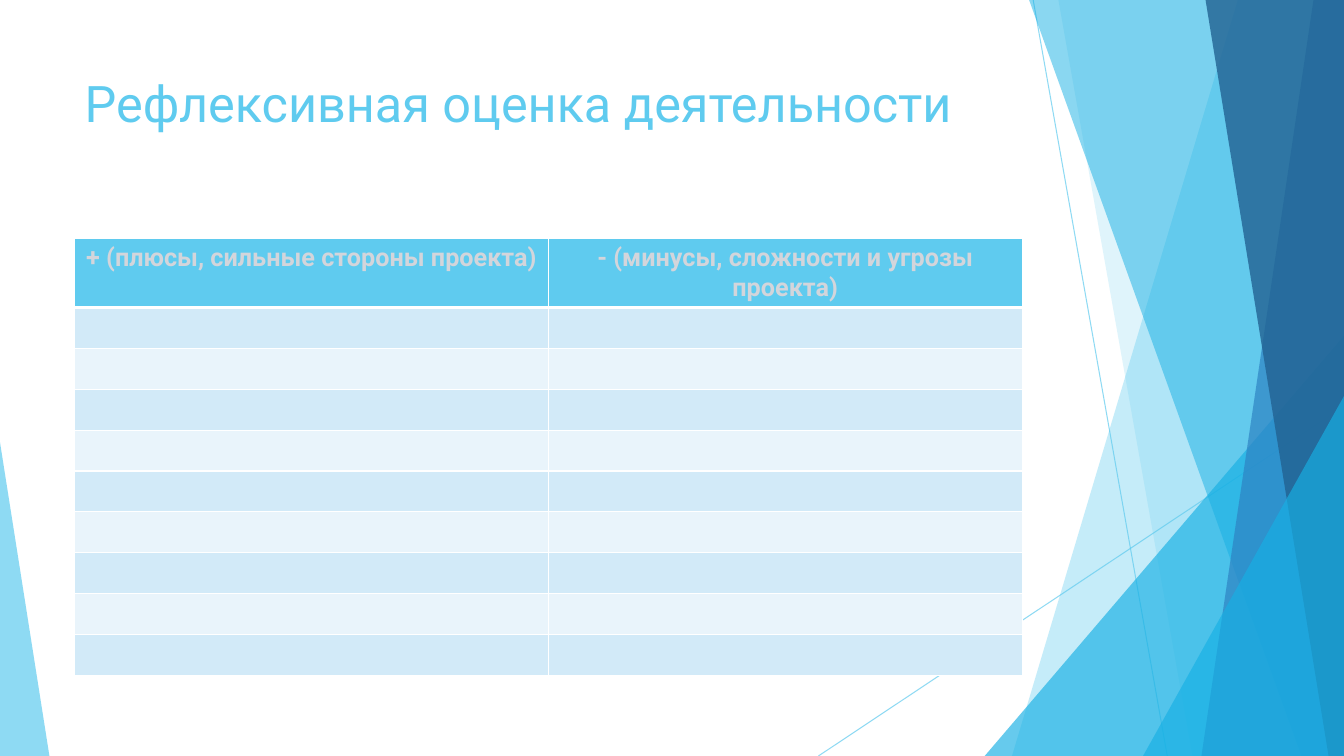
from lxml import etree
from pptx import Presentation
from pptx.dml.color import RGBColor
from pptx.enum.shapes import MSO_CONNECTOR, MSO_SHAPE
from pptx.enum.text import MSO_ANCHOR, PP_ALIGN
from pptx.oxml.ns import qn
from pptx.util import Pt

STRAIGHT = MSO_CONNECTOR.STRAIGHT
TRIANGLE = MSO_SHAPE.ISOSCELES_TRIANGLE
TOP = MSO_ANCHOR.TOP
LEFT, CENTER = PP_ALIGN.LEFT, PP_ALIGN.CENTER

# Content
TITLE = "Рефлексивная оценка деятельности"
HEADERS = ["+ (плюсы, сильные стороны проекта)",
           "- (минусы, сложности и угрозы проекта)"]
EMPTY_ROWS = 9

# Look
FONT = "Roboto"
WIDTH, HEIGHT = 960, 540
SKY, AZURE, BLUE, NAVY = "5FCBEF", "17B0E4", "2E83C3", "226292"
WHITE, GREY = "FFFFFF", "D3D5DB"
BANDS = ["D2EAF8", "E9F4FB"]

# Decoration, back to front; lengths in points, opacity in percent
LINES = [(738, 0, 833.8, HEIGHT), (WIDTH, 290.2, 584.6, HEIGHT)]
LINE_OPACITY = 70
# Bands reach the right edge: ("band", top x, bottom x, colour, opacity)
# Triangles stand on the bottom edge: ("triangle", left, width, height, apex, colour, opacity)
DECORATION = [
    ("band", 884.2, 722.9, SKY, 36),
    ("band", 756, 851.8, SKY, 20),
    ("triangle", 703.4, 256.6, 300.2, 1, AZURE, 66),
    ("band", 735.1, 929.5, AZURE, 50),
    ("band", 938.2, 858.2, BLUE, 70),
    ("band", 861.1, 949, NAVY, 80),
    ("triangle", 816.5, 143.5, 257, 1, AZURE, 66),
    ("triangle", 0, 35.3, 224, 0, SKY, 70),
]

# Layout
CONTENT_LEFT, CONTENT_WIDTH = 53.3, 676.8
TITLE_TOP, TITLE_HEIGHT = 48, 104
TABLE_TOP, HEADER_HEIGHT, ROW_HEIGHT = 170.2, 49.2, 29.2


def paint(color_format, color):
    color_format.rgb = RGBColor.from_string(color)


def set_opacity(shape, percent):
    for color in shape._element.spPr.iter(qn("a:srgbClr")):
        etree.SubElement(color, qn("a:alpha"), val=str(percent * 1000))


def style_decoration(shape, color, opacity):
    shape.shadow.inherit = False
    shape.fill.solid()
    paint(shape.fill.fore_color, color)
    shape.line.fill.background()
    set_opacity(shape, opacity)


def add_line(slide, points):
    line = slide.shapes.add_connector(STRAIGHT, *map(Pt, points))
    line.line.width = Pt(0.75)
    paint(line.line.color, SKY)
    set_opacity(line, LINE_OPACITY)
    etree.SubElement(line._element.spPr, qn("a:effectLst"))


def add_band(slide, top_x, bottom_x, color, opacity):
    builder = slide.shapes.build_freeform(Pt(top_x), 0)
    corners = [(WIDTH, 0), (WIDTH, HEIGHT), (bottom_x, HEIGHT)]
    builder.add_line_segments([(Pt(x), Pt(y)) for x, y in corners], close=True)
    style_decoration(builder.convert_to_shape(), color, opacity)


def add_triangle(slide, left, width, height, apex, color, opacity):
    triangle = slide.shapes.add_shape(
        TRIANGLE, Pt(left), Pt(HEIGHT - height), Pt(width), Pt(height))
    triangle.adjustments[0] = apex
    style_decoration(triangle, color, opacity)


def set_font(paragraph, size, color, bold=False):
    paragraph.font.name = FONT
    paragraph.font.size = Pt(size)
    paragraph.font.bold = bold
    paint(paragraph.font.color, color)


def set_borders(cell, bottom_width):
    properties = cell._tc.get_or_add_tcPr()
    for side, width in (("L", 1), ("R", 1), ("T", 1), ("B", bottom_width)):
        border = etree.SubElement(properties, qn("a:ln" + side), w=str(Pt(width)))
        fill = etree.SubElement(border, qn("a:solidFill"))
        etree.SubElement(fill, qn("a:srgbClr"), val=WHITE)


def add_title(slide):
    title = slide.shapes.title
    title.left, title.top = Pt(CONTENT_LEFT), Pt(TITLE_TOP)
    title.width, title.height = Pt(CONTENT_WIDTH), Pt(TITLE_HEIGHT)
    title.text_frame.text = TITLE
    title.text_frame.vertical_anchor = TOP
    paragraph = title.text_frame.paragraphs[0]
    paragraph.alignment = LEFT
    set_font(paragraph, 36, SKY)


def add_table(slide):
    table = slide.shapes.add_table(
        EMPTY_ROWS + 1, len(HEADERS), Pt(CONTENT_LEFT), Pt(TABLE_TOP),
        Pt(CONTENT_WIDTH), Pt(HEADER_HEIGHT + EMPTY_ROWS * ROW_HEIGHT)).table
    for row_index, row in enumerate(table.rows):
        is_header = row_index == 0
        row.height = Pt(HEADER_HEIGHT if is_header else ROW_HEIGHT)
        for column_index, cell in enumerate(row.cells):
            if is_header:
                cell.text = HEADERS[column_index]
            paragraph = cell.text_frame.paragraphs[0]
            paragraph.alignment = CENTER
            set_font(paragraph, 18, GREY, bold=is_header)
            set_borders(cell, 3 if is_header else 1)
            cell.fill.solid()
            color = SKY if is_header else BANDS[(row_index - 1) % 2]
            paint(cell.fill.fore_color, color)


def main():
    presentation = Presentation()
    presentation.slide_width, presentation.slide_height = Pt(WIDTH), Pt(HEIGHT)
    slide = presentation.slides.add_slide(presentation.slide_layouts[5])
    slide.background.fill.solid()
    paint(slide.background.fill.fore_color, WHITE)

    for points in LINES:
        add_line(slide, points)
    builders = {"band": add_band, "triangle": add_triangle}
    for kind, *values in DECORATION:
        builders[kind](slide, *values)
    add_title(slide)
    add_table(slide)
    presentation.save("out.pptx")


if __name__ == "__main__":
    main()
